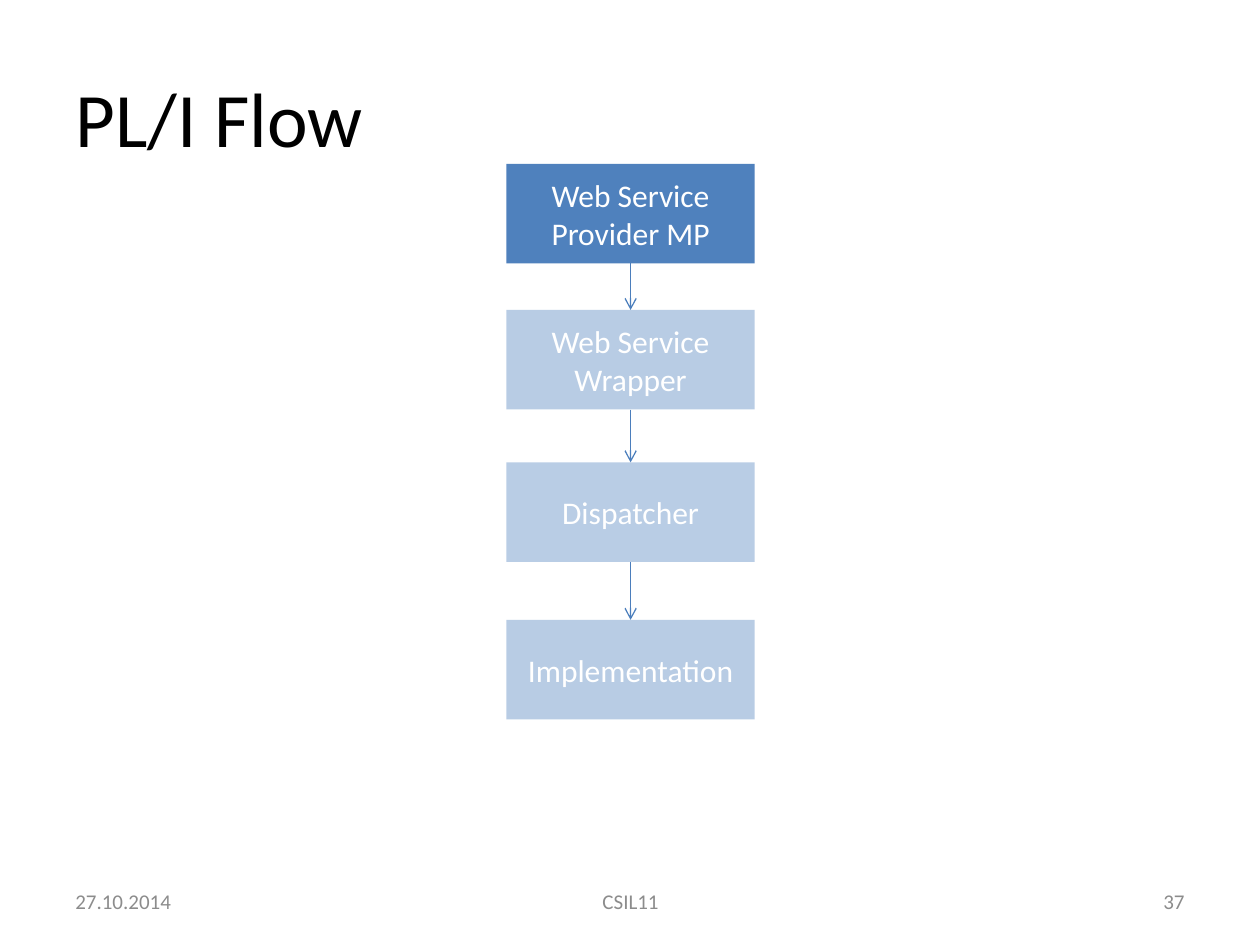
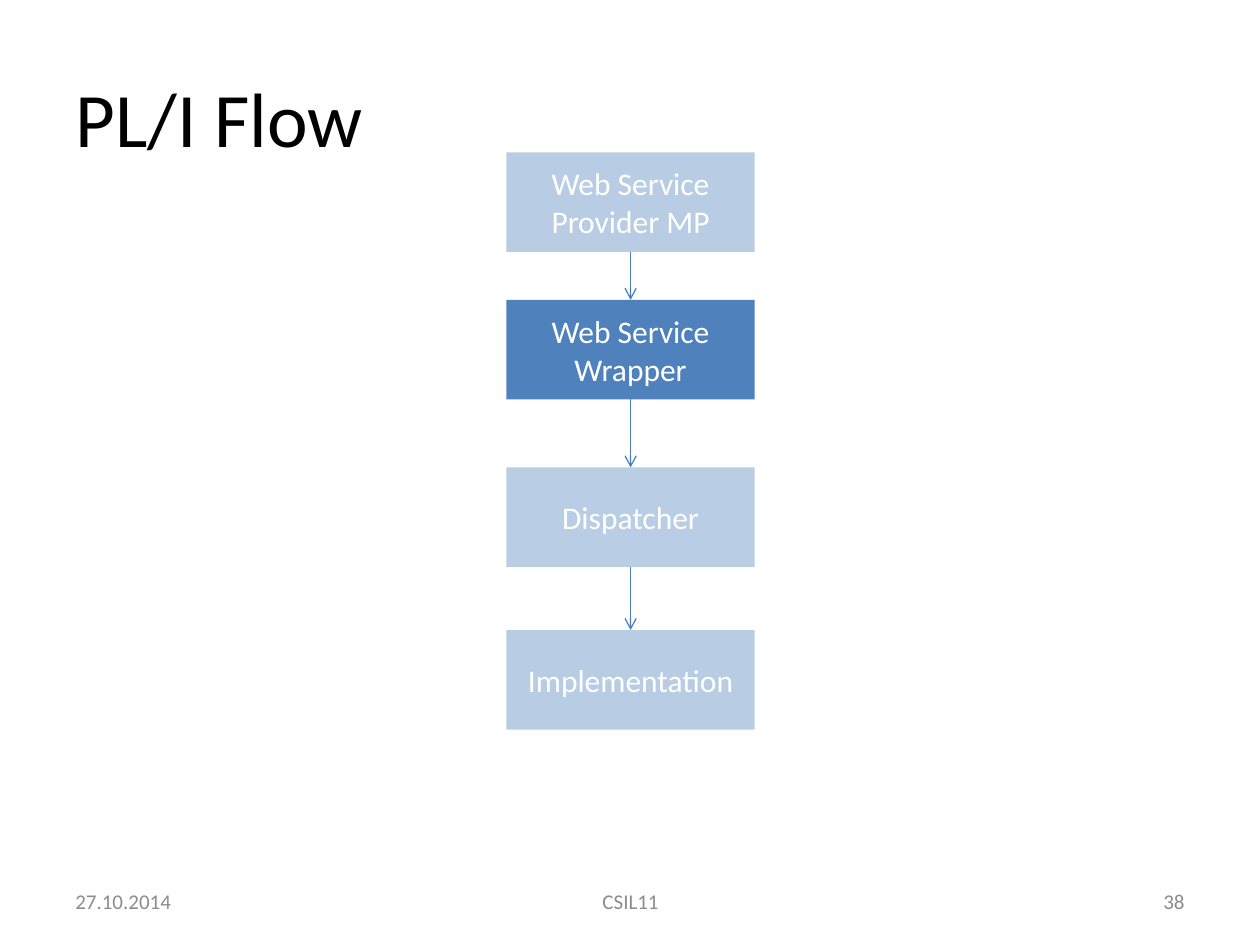
"""Build two PL/I Flow slides, each highlighting one step of the call chain."""
import pptx
import pptx.util
import pptx.dml.color
import pptx.enum.shapes
import pptx.enum.text
import pptx.oxml
import pptx.oxml.ns

Inches = pptx.util.Inches
RGBColor = pptx.dml.color.RGBColor
ALIGN = pptx.enum.text.PP_ALIGN
MIDDLE = pptx.enum.text.MSO_ANCHOR.MIDDLE

BLACK = RGBColor(0x00, 0x00, 0x00)
WHITE = RGBColor(0xFF, 0xFF, 0xFF)
BLUE = RGBColor(0x4F, 0x81, 0xBD)
PALE_BLUE = RGBColor(0xB9, 0xCD, 0xE5)
ARROW_BLUE = RGBColor(0x4B, 0x7E, 0xBC)
FOOTER_GREY = RGBColor(0x8C, 0x8C, 0x8C)

STEP_LEFT, STEP_WIDTH, STEP_HEIGHT = 4.02, 1.97, 0.79
STEPS = [["Web Service", "Provider MP"], ["Web Service", "Wrapper"],
         ["Dispatcher"], ["Implementation"]]
FLOWS = [
    {"page": "37", "active": 0, "tops": [1.3, 2.46, 3.67, 4.92]},
    {"page": "38", "active": 1, "tops": [1.21, 2.38, 3.71, 5.0]},
]


def write(frame, lines, size, color, align):
    frame.word_wrap = True
    frame.vertical_anchor = MIDDLE
    for index, line in enumerate(lines):
        paragraph = frame.paragraphs[0] if index == 0 else frame.add_paragraph()
        paragraph.alignment = align
        run = paragraph.add_run()
        run.text = line
        run.font.name = "Calibri"
        run.font.size = pptx.util.Pt(size)
        run.font.color.rgb = color


def add_xml(parent, tag, **attributes):
    child = pptx.oxml.parse_xml(f"<a:{tag} {pptx.oxml.ns.nsdecls('a')}/>")
    for key, value in attributes.items():
        child.set(key, value)
    parent.append(child)


deck = pptx.Presentation()
deck.slide_width, deck.slide_height = Inches(10), Inches(7.5)

for flow in FLOWS:
    slide = deck.slides.add_slide(deck.slide_layouts[5])
    title = slide.shapes.title
    title.left, title.top = Inches(0.5), Inches(0.3)
    title.width, title.height = Inches(9), Inches(1.25)
    write(title.text_frame, ["PL/I Flow"], 44, BLACK, ALIGN.LEFT)

    previous_step = None
    for index, (label, top) in enumerate(zip(STEPS, flow["tops"])):
        step = slide.shapes.add_shape(
            pptx.enum.shapes.MSO_SHAPE.RECTANGLE, Inches(STEP_LEFT),
            Inches(top), Inches(STEP_WIDTH), Inches(STEP_HEIGHT))
        step.shadow.inherit = False
        step.line.fill.background()
        step.fill.solid()
        active = index == flow["active"]
        is_dispatcher = label == ["Dispatcher"]
        step.fill.fore_color.rgb = PALE_BLUE if is_dispatcher else BLUE
        if not active and not is_dispatcher:
            add_xml(step.fill._xPr.find(".//" + pptx.oxml.ns.qn("a:srgbClr")),
                    "alpha", val="40000")
        lines = [" ".join(label)] if active else label
        write(step.text_frame, lines, 18, WHITE, ALIGN.CENTER)

        if previous_step is not None:
            call = slide.shapes.add_connector(
                pptx.enum.shapes.MSO_CONNECTOR.STRAIGHT, 0, 0, 0, 0)
            call.begin_connect(previous_step, 2)
            call.end_connect(step, 0)
            call.line.color.rgb = ARROW_BLUE
            call.line.width = pptx.util.Pt(0.75)
            add_xml(call.line._get_or_add_ln(), "tailEnd", type="arrow")
            add_xml(call._element.spPr, "effectLst")
        previous_step = step

    for text, left, width, align in [
            ("27.10.2014", 0.5, 2.33, ALIGN.LEFT),
            ("CSIL11", 3.42, 3.17, ALIGN.CENTER),
            (flow["page"], 7.17, 2.33, ALIGN.RIGHT)]:
        footer = slide.shapes.add_textbox(
            Inches(left), Inches(6.95), Inches(width), Inches(0.4))
        write(footer.text_frame, [text], 12, FOOTER_GREY, align)

deck.save("out.pptx")
